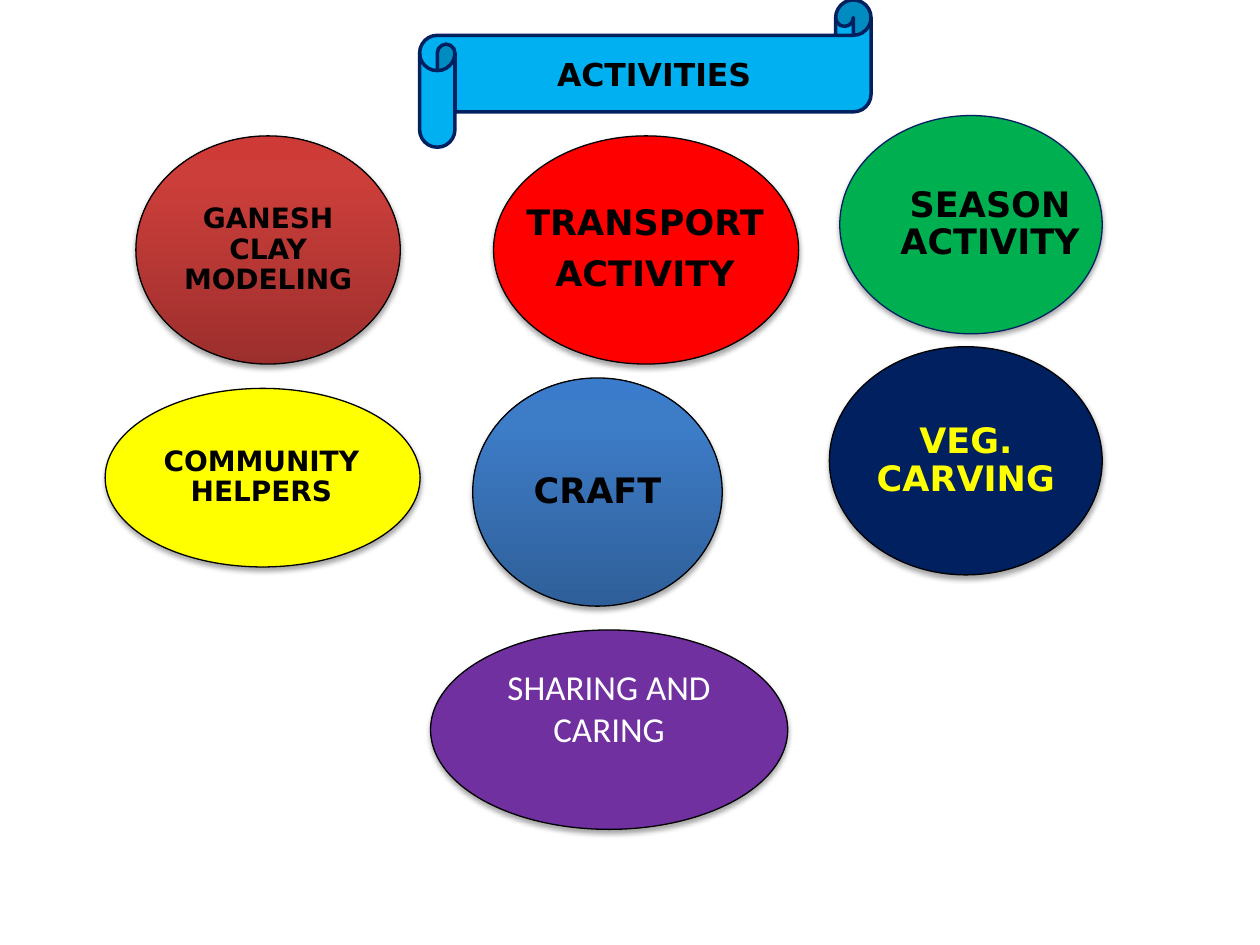
from math import sqrt

from lxml.etree import SubElement
from pptx import Presentation
from pptx.dml.color import RGBColor
from pptx.enum.shapes import MSO_SHAPE as Shape
from pptx.enum.text import MSO_ANCHOR as Anchor, PP_ALIGN as Align
from pptx.oxml.ns import qn
from pptx.util import Cm, Pt

RED_FADE = [(0, "9C2F2D"), (80, "CB3E3A"), (100, "CE3B37")]
BLUE_FADE = [(0, "2F5F99"), (80, "3D7CC7"), (100, "3A7CCB")]
BLACK, NAVY, YELLOW, WHITE = "000000", "002060", "FFFF00", "FFFFFF"
HEADING_FONT = "DejaVu Sans"

TITLE = ("ACTIVITIES", (8.46, 0, 9.1, 2.97))
# lines, oval (left, top, width, height), fill, outline, size, colour, label (left, width)
ACTIVITIES = [
    (["GANESH CLAY MODELING"], (2.74, 2.74, 5.33, 4.6), RED_FADE, BLACK, 16, BLACK, None),
    (["TRANSPORT", "ACTIVITY"], (9.95, 2.74, 6.15, 4.6), "FF0000", BLACK, 20, BLACK, (10.21, 5.59)),
    (["SEASON ACTIVITY"], (16.93, 2.33, 5.29, 4.4), "00B050", NAVY, 20, BLACK, (17.7, 4.52)),
    (["COMMUNITY HELPERS"], (2.12, 7.83, 6.35, 3.6), YELLOW, BLACK, 16, BLACK, (2.92, 4.7)),
    (["CRAFT"], (9.53, 7.62, 5.03, 4.6), BLUE_FADE, BLACK, 20, BLACK, None),
    (["VEG. CARVING"], (16.72, 6.99, 5.5, 4.6), NAVY, BLACK, 20, YELLOW, None),
]
SHARING = ("SHARING AND CARING", (8.68, 12.7, 7.2, 4.02), "7030A0")


def color(value):
    return RGBColor.from_string(value)


def paint(shape, fill, outline, width):
    if isinstance(fill, str):
        shape.fill.solid()
        shape.fill.fore_color.rgb = color(fill)
    else:
        shape.fill.gradient()
        shape.fill.gradient_angle = 90
        stops = shape._element.spPr.find(".//" + qn("a:gsLst"))
        stops.clear()
        for position, value in fill:
            stop = SubElement(stops, qn("a:gs"), pos=str(position * 1000))
            SubElement(stop, qn("a:srgbClr"), val=value)
    shape.line.color.rgb = color(outline)
    shape.line.width = Pt(width)
    shape.shadow.inherit = False


def add_oval(shapes, place, fill, outline):
    oval = shapes.add_shape(Shape.OVAL, *map(Cm, place))
    paint(oval, fill, outline, 0.75)
    effects = oval._element.spPr.find(qn("a:effectLst"))
    shadow = SubElement(effects, qn("a:outerShdw"), blurRad=str(Pt(3.1)),
                        dist=str(Pt(1.8)), dir="5400000", rotWithShape="0")
    tint = SubElement(shadow, qn("a:srgbClr"), val=BLACK)
    SubElement(tint, qn("a:alpha"), val="35000")
    return oval


def write(frame, lines, font, size, value, bold, anchor):
    frame.word_wrap = True
    frame.vertical_anchor = anchor
    for index, line in enumerate(lines):
        para = frame.add_paragraph() if index else frame.paragraphs[0]
        para.text = line
        para.alignment = Align.CENTER
        para.font.name = font
        para.font.size = Pt(size)
        para.font.bold = bold
        para.font.color.rgb = color(value)


def add_label(shapes, lines, place, size, value, span):
    left, top, width, height = place
    inset = (1 - sqrt(0.5)) / 2
    label_left, label_width = span or (left + width * inset, width * sqrt(0.5))
    box = shapes.add_textbox(Cm(label_left), Cm(top + height * inset),
                             Cm(label_width), Cm(height * sqrt(0.5)))
    frame = box.text_frame
    frame.margin_left = frame.margin_right = Cm(0.03)
    frame.margin_top = frame.margin_bottom = Cm(0.03)
    write(frame, lines, HEADING_FONT, size, value, True, Anchor.MIDDLE)
    for para in frame.paragraphs:
        para.line_spacing = 0.9
        para.space_after = Pt(size * 0.38)


def main():
    deck = Presentation()
    deck.slide_width, deck.slide_height = Cm(25.4), Cm(19.05)
    page = deck.slides.add_slide(deck.slide_layouts[6])

    title, place = TITLE
    scroll = page.shapes.add_shape(Shape.HORIZONTAL_SCROLL, *map(Cm, place))
    scroll.adjustments[0] = 0.24
    paint(scroll, "00B0F0", NAVY, 2)
    write(scroll.text_frame, [title], HEADING_FONT, 18, BLACK, True, Anchor.MIDDLE)

    for lines, place, fill, outline, size, value, span in ACTIVITIES:
        group = page.shapes.add_group_shape()
        add_oval(group.shapes, place, fill, outline)
        add_label(group.shapes, lines, place, size, value, span)

    text, place, fill = SHARING
    oval = add_oval(page.shapes, place, fill, BLACK)
    write(oval.text_frame, [text], "Calibri", 20, WHITE, False, Anchor.TOP)

    deck.save("out.pptx")


if __name__ == "__main__":
    main()
